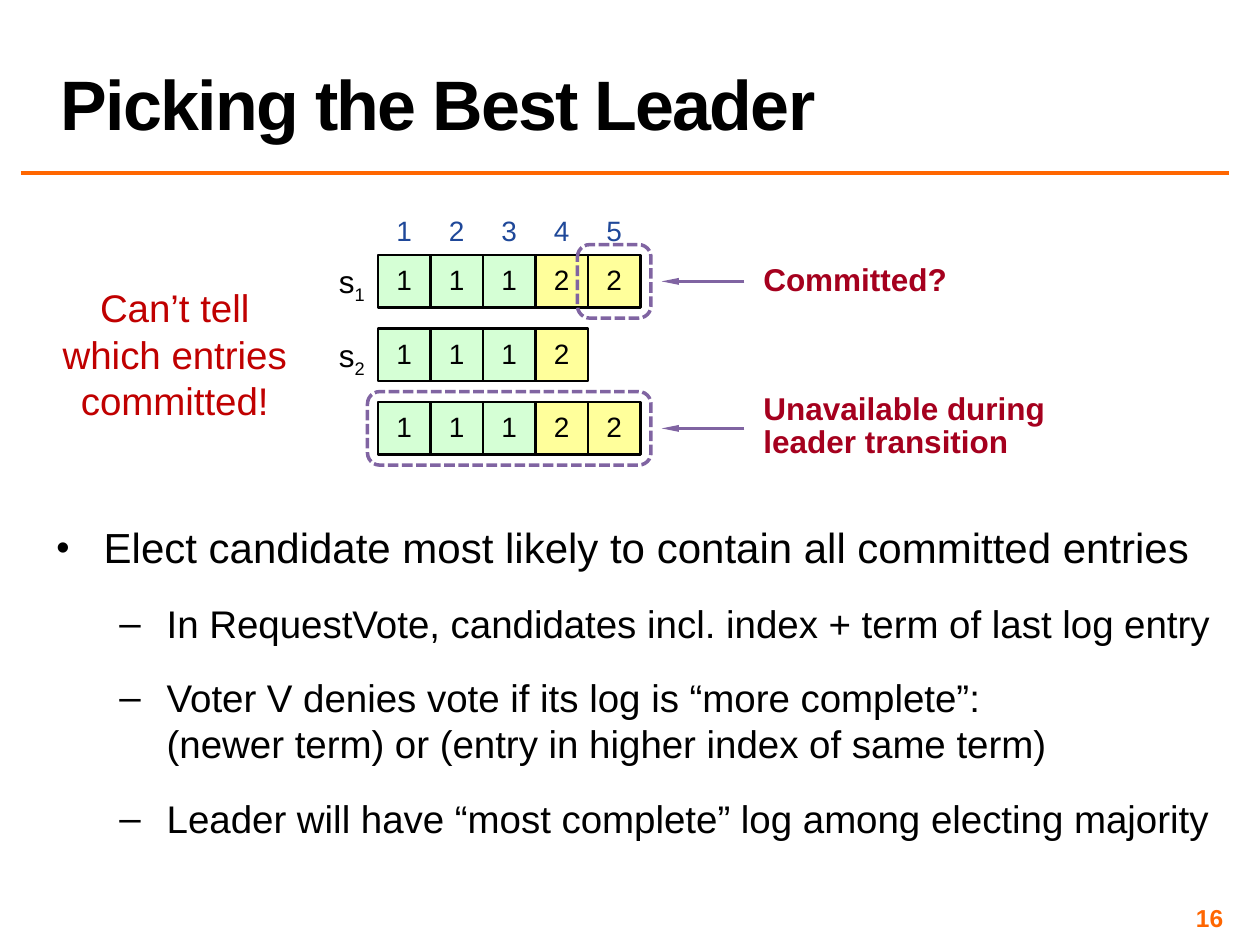
from dataclasses import dataclass

from lxml import etree
from pptx import Presentation
from pptx.dml.color import RGBColor
from pptx.enum.dml import MSO_LINE
from pptx.enum.shapes import MSO_CONNECTOR, MSO_SHAPE
from pptx.enum.text import MSO_ANCHOR, MSO_AUTO_SIZE, PP_ALIGN
from pptx.oxml.ns import qn
from pptx.util import Emu, Pt

RECT, ROUND_RECT = MSO_SHAPE.RECTANGLE, MSO_SHAPE.ROUNDED_RECTANGLE
STRAIGHT, DASH = MSO_CONNECTOR.STRAIGHT, MSO_LINE.SQUARE_DOT
LEFT, CENTER, RIGHT = PP_ALIGN.LEFT, PP_ALIGN.CENTER, PP_ALIGN.RIGHT
TOP, MIDDLE, BOTTOM = MSO_ANCHOR.TOP, MSO_ANCHOR.MIDDLE, MSO_ANCHOR.BOTTOM
NO_FIT, GROW = MSO_AUTO_SIZE.NONE, MSO_AUTO_SIZE.SHAPE_TO_FIT_TEXT


@dataclass(frozen=True)
class Theme:
    font: str = "Arial"
    ink: str = "000000"
    accent: str = "FF6600"
    index: str = "1F4899"
    note: str = "A5001E"
    warning: str = "C00000"
    marker: str = "8064A2"
    terms: tuple = ("D5FFD5", "FFFF9B")
    title_size: int = 40
    body_size: int = 24
    sub_size: int = 22
    label_size: int = 18
    cell_size: int = 16
    number_size: int = 14


THEME = Theme()
CELL, ROW_PITCH, MARGIN = 50, 70, 10
LOG_X, LOG_Y = 360, 243
LOGS = [(1, 1, 1, 2, 2), (1, 1, 1, 2), (1, 1, 1, 2, 2)]
SUB_POINTS = [
    "In RequestVote, candidates incl. index + term of last log entry",
    "Voter V denies vote if its log is “more complete”:\n"
    "(newer term) or (entry in higher index of same term)",
    "Leader will have “most complete” log among electing majority",
]


def px(n):
    return Emu(n * 7620)


def box(*lengths):
    return [px(n) for n in lengths]


def rgb(color):
    return RGBColor.from_string(color)


def add_run(p, text, size, color, bold=False):
    r = p.add_run()
    r.text = text
    r.font.name = THEME.font
    r.font.size = Pt(size)
    r.font.bold = bold
    r.font.color.rgb = rgb(color)
    return r


def set_insets(tf, inset):
    tf.margin_left = tf.margin_right = tf.margin_top = tf.margin_bottom = px(inset)


def add_text(shapes, at, text, size, color, align=LEFT, bold=False,
             inset=None, anchor=TOP, fit=GROW, spacing=None):
    tf = shapes.add_textbox(*box(*at)).text_frame
    tf.word_wrap = True
    tf.auto_size = fit
    tf.vertical_anchor = anchor
    if inset is not None:
        set_insets(tf, inset)
    p = tf.paragraphs[0]
    p.alignment = align
    if spacing:
        p.line_spacing = Pt(spacing)
    add_run(p, text, size, color, bold)
    return p


def add_line(shapes, start, end, color, width):
    line = shapes.add_connector(STRAIGHT, *box(*start, *end))
    line.line.color.rgb = rgb(color)
    line.line.width = Pt(width)
    etree.SubElement(line._element.spPr, qn("a:effectLst"))
    return line


def add_arrow(shapes, start, end):
    ln = add_line(shapes, start, end, THEME.marker, 1.5).line._get_or_add_ln()
    etree.SubElement(ln, qn("a:tailEnd"), type="triangle", w="sm", len="lg")


def add_cell(shapes, x, y, term):
    sp = shapes.add_shape(RECT, *box(x, y, CELL, CELL))
    sp.shadow.inherit = False
    sp.fill.solid()
    sp.fill.fore_color.rgb = rgb(THEME.terms[term - 1])
    sp.line.color.rgb = rgb(THEME.ink)
    sp.line.width = Pt(1.5)
    tf = sp.text_frame
    set_insets(tf, 0)
    tf.vertical_anchor = MIDDLE
    p = tf.paragraphs[0]
    p.alignment = CENTER
    p.line_spacing = Pt(17)
    add_run(p, str(term), THEME.cell_size, THEME.ink)


def add_callout(s, row, first, count, text, text_at):
    shapes = s.shapes.add_group_shape().shapes
    x, y = LOG_X + first * CELL - MARGIN, LOG_Y + row * ROW_PITCH - MARGIN
    w, h = count * CELL + 2 * MARGIN, CELL + 2 * MARGIN
    sp = shapes.add_shape(ROUND_RECT, *box(x, y, w, h))
    sp.shadow.inherit = False
    sp.fill.background()
    sp.line.color.rgb = rgb(THEME.marker)
    sp.line.width = Pt(2)
    sp.line.dash_style = DASH
    mid = y + h // 2
    add_arrow(shapes, (x + w + 89, mid), (x + w + MARGIN, mid))
    add_text(shapes, text_at, text, THEME.label_size, THEME.note,
             bold=True, inset=0, spacing=19)


def add_bullet(p, text, size, char, indent, scale=100):
    p.space_before = p.space_after = Pt(8)
    pPr = p._p.get_or_add_pPr()
    pPr.set("marL", str(px(indent)))
    pPr.set("indent", str(px(-45)))
    clr = etree.SubElement(pPr, qn("a:buClr"))
    etree.SubElement(clr, qn("a:srgbClr"), val=THEME.ink)
    etree.SubElement(pPr, qn("a:buSzPct"), val=str(scale * 1000))
    etree.SubElement(pPr, qn("a:buFont"), typeface=THEME.font)
    etree.SubElement(pPr, qn("a:buChar"), char=char)
    for i, line in enumerate(text.split("\n")):
        if i:
            p.add_line_break()
        add_run(p, line, size, THEME.ink)


def add_title(s, text):
    sp = s.shapes.title
    sp.left, sp.top, sp.width, sp.height = box(46, 2, 1124, 141)
    tf = sp.text_frame
    tf.auto_size = NO_FIT
    tf.vertical_anchor = BOTTOM
    p = tf.paragraphs[0]
    p.alignment = LEFT
    p.line_spacing = 0.8
    r = add_run(p, text, THEME.title_size, THEME.ink, True)
    r.font._element.set("spc", "-100")


def add_logs(s):
    for col in range(len(LOGS[0])):
        add_text(s.shapes, (LOG_X + col * CELL, 197, CELL, 44), str(col + 1),
                 THEME.cell_size, THEME.index, CENTER)
    for row, terms in enumerate(LOGS):
        for col, term in enumerate(terms):
            add_cell(s.shapes, LOG_X + col * CELL, LOG_Y + row * ROW_PITCH, term)
    for row in range(2):
        p = add_text(s.shapes, (310, 250 + row * ROW_PITCH, CELL, 36), "s",
                     THEME.label_size, THEME.ink, CENTER, inset=0)
        r = add_run(p, str(row + 1), THEME.label_size, THEME.ink)
        r.font._element.set("baseline", "-25000")


def add_points(s):
    tf = s.shapes.add_textbox(*box(42, 491, 1128, 378)).text_frame
    tf.word_wrap = True
    add_bullet(tf.paragraphs[0],
               "Elect candidate most likely to contain all committed entries",
               THEME.body_size, "•", 45, 90)
    for text in SUB_POINTS:
        p = tf.add_paragraph()
        p.level = 1
        add_bullet(p, text, THEME.sub_size, "–", 105)


def main():
    prs = Presentation()
    prs.slide_width, prs.slide_height = box(1200, 900)
    s = prs.slides.add_slide(prs.slide_layouts[5])
    add_line(s.shapes, (20, 165), (1170, 165), THEME.accent, 2)
    add_text(s.shapes, (890, 860, 280, 28), "16", THEME.number_size,
             THEME.accent, RIGHT, True, inset=5, anchor=MIDDLE, fit=NO_FIT)
    add_title(s, "Picking the Best Leader")
    add_logs(s)
    add_callout(s, 2, 0, 5, "Unavailable during leader transition", (727, 375, 332, 63))
    add_callout(s, 0, 4, 1, "Committed?", (727, 252, 240, 32))
    add_text(s.shapes, (38, 265, 257, 145), "Can’t tell which entries committed!",
             THEME.sub_size, THEME.warning, CENTER)
    add_points(s)
    prs.save("out.pptx")


if __name__ == "__main__":
    main()
